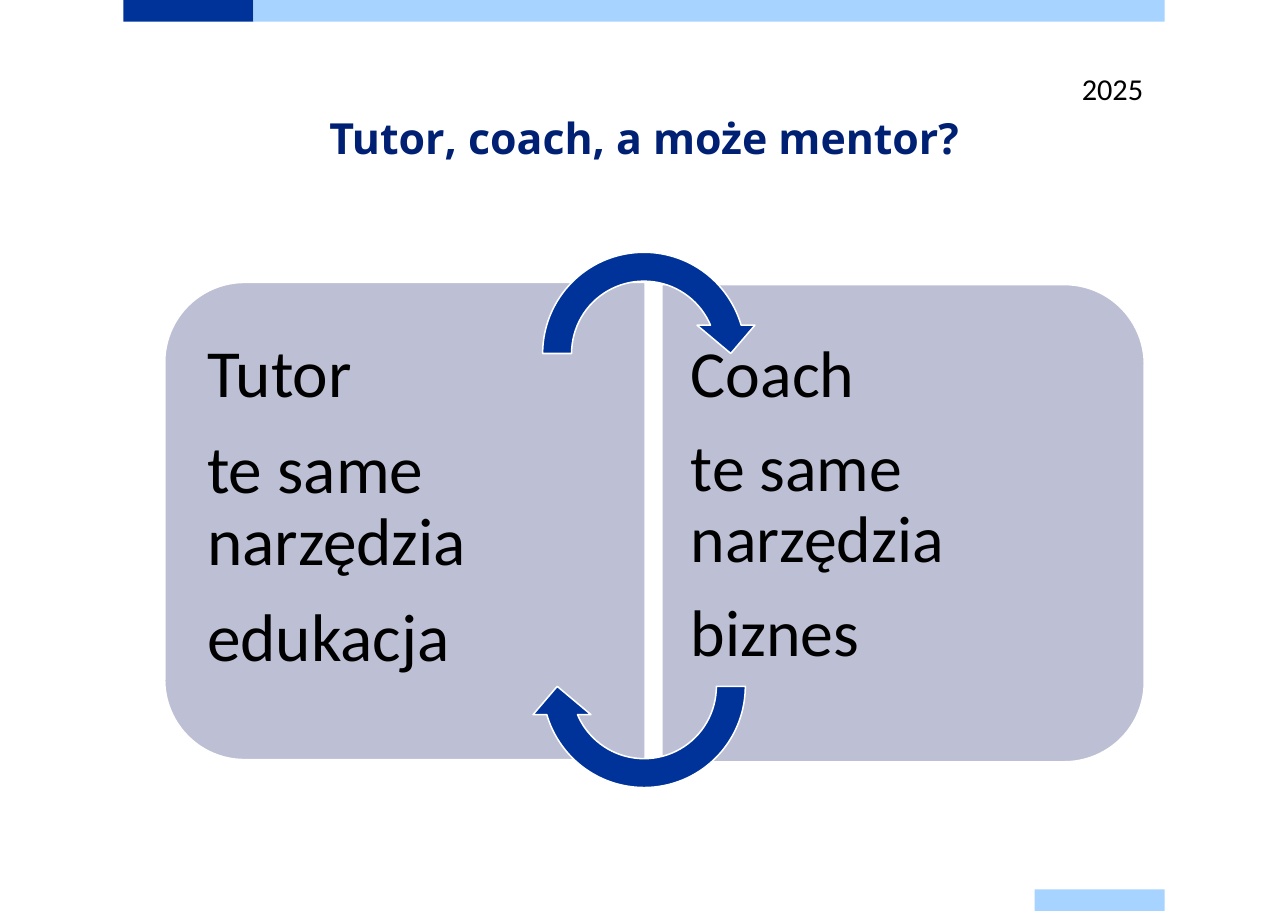
from pptx import Presentation
from pptx.dml.color import RGBColor
from pptx.enum.shapes import MSO_SHAPE
from pptx.enum.text import MSO_ANCHOR, PP_ALIGN
from pptx.util import Inches, Pt

TITLE = "Tutor, coach, a może mentor?"
YEAR = "2025"

NAVY = RGBColor(0x00, 0x20, 0x73)
BLUE = RGBColor(0x00, 0x33, 0x99)
SKY = RGBColor(0xA6, 0xD3, 0xFF)
LAVENDER = RGBColor(0xBD, 0xBF, 0xD4)
WHITE = RGBColor(0xFF, 0xFF, 0xFF)
BLACK = RGBColor(0x00, 0x00, 0x00)

# Grid of square cells: 42 rows high, 48 columns centred on the slide.
ROWS, COLUMNS = 42, 48
MIDDLE = COLUMNS / 2

# Frames are column, row, width and height in cells.
BANDS = [
    ((0, 0, 6, 1), BLUE),
    ((6, 0, 42, 1), SKY),
    ((42, 41, 6, 1), SKY),
]
TITLE_FRAME = (0, 5, COLUMNS, 6)
YEAR_FRAME = (43.68, 3, 10, 2.03)

# Panel centre, panel length, rotation, text frame, insets in inches, size, lines
ROLES = [
    ((12.98, 24.02), 22.14, 270, (2.95, 14.07, 21.03, 19.86),
     (0.18, 0.31, 0.28, 0.31), 44, ["Tutor", "te same narzędzia", "edukacja"]),
    ((35.94, 24.12), 22.24, 90, (24.79, 14.17, 21.13, 19.86),
     (0.27, 0.3, 0.18, 0.3), 43, ["Coach", "te same narzędzia", "biznes"]),
]
PANEL_HEIGHT = 22
PANEL_ROUNDING = [0.167, 0]

# Arrow centre row and rotation
ARROWS = [(16.3, 0), (31.64, 180)]
ARROW_SIZE = 10.67
ARROW_BEND = [0.125, 11.42, 204.58, 108, 0.125]

deck = Presentation()
deck.slide_width, deck.slide_height = Inches(11.69), Inches(8.27)
CELL = deck.slide_height / ROWS
MARGIN = (deck.slide_width - COLUMNS * CELL) / 2
slide = deck.slides.add_slide(deck.slide_layouts[5])


def to_emu(frame):
    column, row, width, height = frame
    return (int(MARGIN + column * CELL), int(row * CELL),
            int(width * CELL), int(height * CELL))


def centred(column, row, width, height):
    return column - width / 2, row - height / 2, width, height


def add_filled(preset, frame, fill, outline=None, rotation=0, adjustments=()):
    shape = slide.shapes.add_shape(preset, *to_emu(frame))
    shape.shadow.inherit = False
    shape.rotation = rotation
    for index, value in enumerate(adjustments):
        shape.adjustments[index] = value
    shape.fill.solid()
    shape.fill.fore_color.rgb = fill
    if outline is None:
        shape.line.fill.background()
    else:
        shape.line.color.rgb = outline
        shape.line.width = Pt(1)


def set_insets(text_frame, insets):
    (text_frame.margin_left, text_frame.margin_top,
     text_frame.margin_right, text_frame.margin_bottom) = map(Inches, insets)


def add_run(paragraph, words, size, font="Calibri", colour=BLACK, bold=False):
    run = paragraph.add_run()
    run.text = words
    run.font.size = Pt(size)
    run.font.name = font
    run.font.color.rgb = colour
    run.font.bold = bold


def add_text(frame):
    text_frame = slide.shapes.add_textbox(*to_emu(frame)).text_frame
    text_frame.word_wrap = True
    return text_frame


for frame, colour in BANDS:
    add_filled(MSO_SHAPE.RECTANGLE, frame, colour)

title = slide.shapes.title
title.left, title.top, title.width, title.height = to_emu(TITLE_FRAME)
title.text_frame.vertical_anchor = MSO_ANCHOR.TOP
set_insets(title.text_frame, (0, 0, 0, 0))
heading = title.text_frame.paragraphs[0]
heading.alignment = PP_ALIGN.CENTER
heading.line_spacing = Pt(36)
add_run(heading, TITLE, 28, "Open Sans", NAVY, True)

for centre, length, rotation, text_area, insets, size, lines in ROLES:
    add_filled(MSO_SHAPE.ROUND_2_SAME_RECTANGLE,
               centred(*centre, PANEL_HEIGHT, length),
               LAVENDER, WHITE, rotation, PANEL_ROUNDING)
    role_text = add_text(text_area)
    set_insets(role_text, insets)
    for index, line in enumerate(lines):
        paragraph = role_text.add_paragraph() if index else role_text.paragraphs[0]
        paragraph.line_spacing = 0.9
        paragraph.space_after = Pt(15)
        add_run(paragraph, line, size)

for row, rotation in ARROWS:
    add_filled(MSO_SHAPE.CIRCULAR_ARROW,
               centred(MIDDLE, row, ARROW_SIZE, ARROW_SIZE),
               BLUE, WHITE, rotation, ARROW_BEND)

add_run(add_text(YEAR_FRAME).paragraphs[0], YEAR, 19.8)

deck.save("out.pptx")
